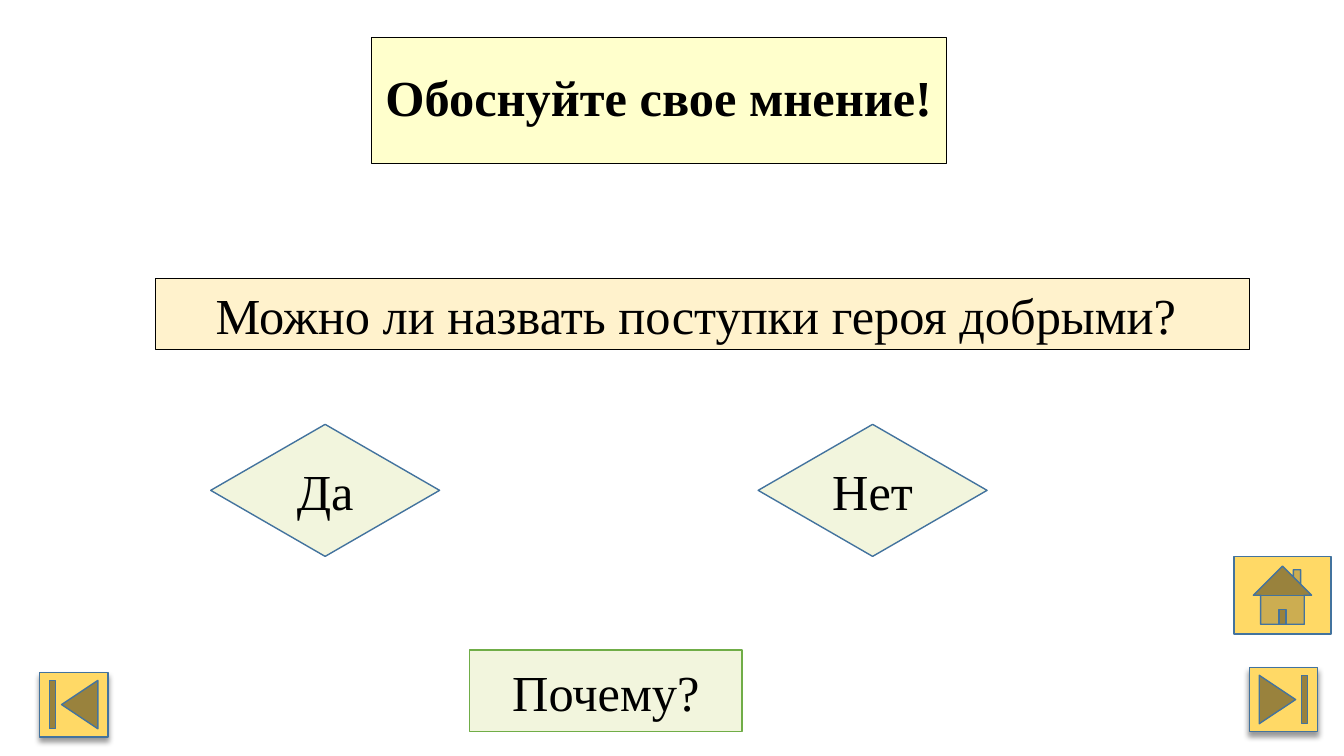
from lxml import etree
from pptx import Presentation
from pptx.dml.color import RGBColor
from pptx.enum.shapes import MSO_SHAPE
from pptx.enum.text import MSO_ANCHOR, PP_ALIGN
from pptx.oxml import parse_xml
from pptx.util import Inches, Pt

RECTANGLE = MSO_SHAPE.RECTANGLE
DIAMOND = MSO_SHAPE.FLOWCHART_DECISION
BUTTON_END = MSO_SHAPE.ACTION_BUTTON_END
BUTTON_HOME = MSO_SHAPE.ACTION_BUTTON_HOME
CENTER, JUSTIFY = PP_ALIGN.CENTER, PP_ALIGN.JUSTIFY
MIDDLE = MSO_ANCHOR.MIDDLE

BLACK, BLUE, GREEN = "000000", "43739E", "70AD47"
CREAM, PEACH, PALE_GREEN, GOLD = "FFFFCC", "FFF2CC", "F2F5DD", "FFD966"

SHADOW = (
    '<a:outerShdw xmlns:a="http://schemas.openxmlformats.org/drawingml/2006/main"'
    ' blurRad="50800" dist="38100" dir="5400000" algn="t" rotWithShape="0">'
    '<a:srgbClr val="000000"><a:alpha val="40000"/></a:srgbClr></a:outerShdw>'
)


def paint(shape, fill, line, width=1):
    shape.shadow.inherit = False
    shape.fill.solid()
    shape.fill.fore_color.rgb = RGBColor.from_string(fill)
    shape.line.color.rgb = RGBColor.from_string(line)
    shape.line.width = Pt(width)


def write(shape, text, align=CENTER, bold=False, spacing=1.0, indent=0):
    frame = shape.text_frame
    frame.word_wrap = True
    frame.vertical_anchor = MIDDLE
    paragraph = frame.paragraphs[0]
    paragraph.text = text
    paragraph.alignment = align
    paragraph.line_spacing = spacing
    if indent:
        paragraph._p.get_or_add_pPr().set("indent", str(Inches(indent)))
    font = paragraph.runs[0].font
    font.name = "Times New Roman"
    font.size = Pt(36)
    font.bold = bold
    font.color.rgb = RGBColor.from_string(BLACK)


presentation = Presentation()
presentation.slide_width = Inches(13.33)
presentation.slide_height = Inches(7.5)
slide = presentation.slides.add_slide(presentation.slide_layouts[5])

# Title
title = slide.shapes.title
title.left, title.top = Inches(3.68), Inches(0.37)
title.width, title.height = Inches(5.71), Inches(1.25)
paint(title, CREAM, BLACK, 0.75)
write(title, "Обоснуйте свое мнение!", bold=True, spacing=0.9)

# Question
question = slide.shapes.add_shape(
    RECTANGLE, Inches(1.54), Inches(2.76), Inches(10.85), Inches(0.71))
paint(question, PEACH, BLACK, 0.75)
write(question, "Можно ли назвать поступки героя добрыми?", align=JUSTIFY, indent=0.5)

# Navigation buttons: back, home, forward
for kind, left, top, width, height, rotation, has_shadow in [
    (BUTTON_END, 0.39, 6.67, 0.68, 0.64, 180, True),
    (BUTTON_HOME, 12.24, 5.52, 0.96, 0.77, 0, False),
    (BUTTON_END, 12.39, 6.62, 0.68, 0.64, 0, True),
]:
    button = slide.shapes.add_shape(
        kind, Inches(left), Inches(top), Inches(width), Inches(height))
    button.rotation = rotation
    paint(button, GOLD, BLUE)
    if has_shadow:
        effects = button._element.spPr.find(
            "{http://schemas.openxmlformats.org/drawingml/2006/main}effectLst")
        etree.ElementBase.append(effects, parse_xml(SHADOW))

# Answers and follow-up question
for kind, text, left, top, width, height, line in [
    (DIAMOND, "Да", 2.09, 4.21, 2.27, 1.31, BLUE),
    (DIAMOND, "Нет", 7.52, 4.21, 2.27, 1.31, BLUE),
    (RECTANGLE, "Почему?", 4.66, 6.45, 2.7, 0.81, GREEN),
]:
    answer = slide.shapes.add_shape(
        kind, Inches(left), Inches(top), Inches(width), Inches(height))
    paint(answer, PALE_GREEN, line)
    write(answer, text)

presentation.save("out.pptx")
